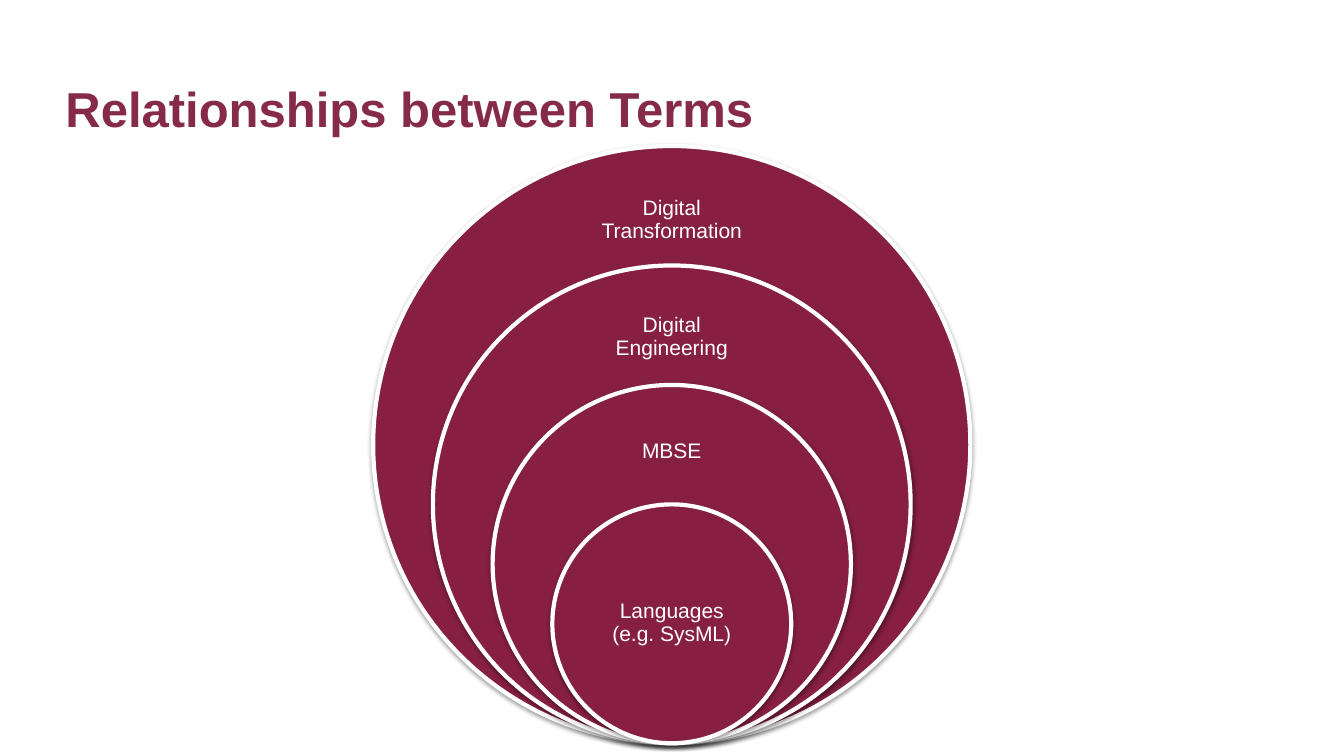
from dataclasses import dataclass

import pptx
import pptx.dml.color
import pptx.enum.shapes
import pptx.enum.text
import pptx.oxml
import pptx.oxml.ns
import pptx.util
from pptx.util import Cm


@dataclass(frozen=True)
class Theme:
    font: str = "Arial"
    title: str = "852A49"
    disc: str = "861F41"
    white: str = "FFFFFF"
    big: int = 35
    small: int = 15
    rim: int = 3


THEME = Theme()
MIDDLE, BASE = 16.93, 18.73  # shared centre line and lowest point, in cm
STEP = 3.01  # diameter gained from ring to ring, in cm

# label, diameter in steps, label top, width and height in cm
RINGS = [
    ("Digital Transformation", 5, 4.42, 4.22, 2.26),
    ("Digital Engineering", 4, 7.42, 4.22, 2.16),
    ("MBSE", 3, 10.36, 4.22, 2.03),
    ("Languages (e.g. SysML)", 2, 14.2, 4.27, 3.02),
]

SHADOW = (
    '<a:outerShdw %s blurRad="40000" dist="20000" dir="5400000" rotWithShape="0">'
    '<a:srgbClr val="000000"><a:alpha val="38000"/></a:srgbClr></a:outerShdw>'
    % pptx.oxml.ns.nsdecls("a")
)


def color(code):
    return pptx.dml.color.RGBColor.from_string(code)


def add_text(shapes, text, box, pads, size, tint, align, bold=False):
    """Add one vertically centred paragraph; pads are side and top insets."""
    frame = shapes.add_textbox(*map(Cm, box)).text_frame
    frame.word_wrap = True
    frame.vertical_anchor = pptx.enum.text.MSO_ANCHOR.MIDDLE
    frame.margin_left = frame.margin_right = Cm(pads[0])
    frame.margin_top = frame.margin_bottom = Cm(pads[1])
    para = frame.paragraphs[0]
    para.text = text
    para.alignment = align
    para.line_spacing = 0.9
    para.font.name = THEME.font
    para.font.size = pptx.util.Pt(size)
    para.font.bold = bold
    para.font.color.rgb = color(tint)


def add_disc(shapes, size):
    """Add a circle that rests on the shared base point."""
    disc = shapes.add_shape(
        pptx.enum.shapes.MSO_SHAPE.OVAL,
        Cm(MIDDLE - size / 2), Cm(BASE - size), Cm(size), Cm(size),
    )
    disc.fill.solid()
    disc.fill.fore_color.rgb = color(THEME.disc)
    disc.line.color.rgb = color(THEME.white)
    disc.line.width = pptx.util.Pt(THEME.rim)
    disc.shadow.inherit = False
    effects = disc.element.spPr.find(pptx.oxml.ns.qn("a:effectLst"))
    effects.append(pptx.oxml.parse_xml(SHADOW))


def main():
    deck = pptx.Presentation()
    deck.slide_width, deck.slide_height = Cm(33.87), Cm(19.05)
    slide = deck.slides.add_slide(deck.slide_layouts[6])
    align = pptx.enum.text.PP_ALIGN

    add_text(slide.shapes, "Relationships between Terms",
             (1.4, 0.97, 29.21, 3.68), (0.25, 0.13),
             THEME.big, THEME.title, align.LEFT, bold=True)

    rings = slide.shapes.add_group_shape().shapes
    for label, steps, top, width, height in RINGS:
        add_disc(rings, steps * STEP)
        add_text(rings, label, (MIDDLE - width / 2, top, width, height),
                 (0.3, 0.3), THEME.small, THEME.white, align.CENTER)

    deck.save("out.pptx")


if __name__ == "__main__":
    main()
